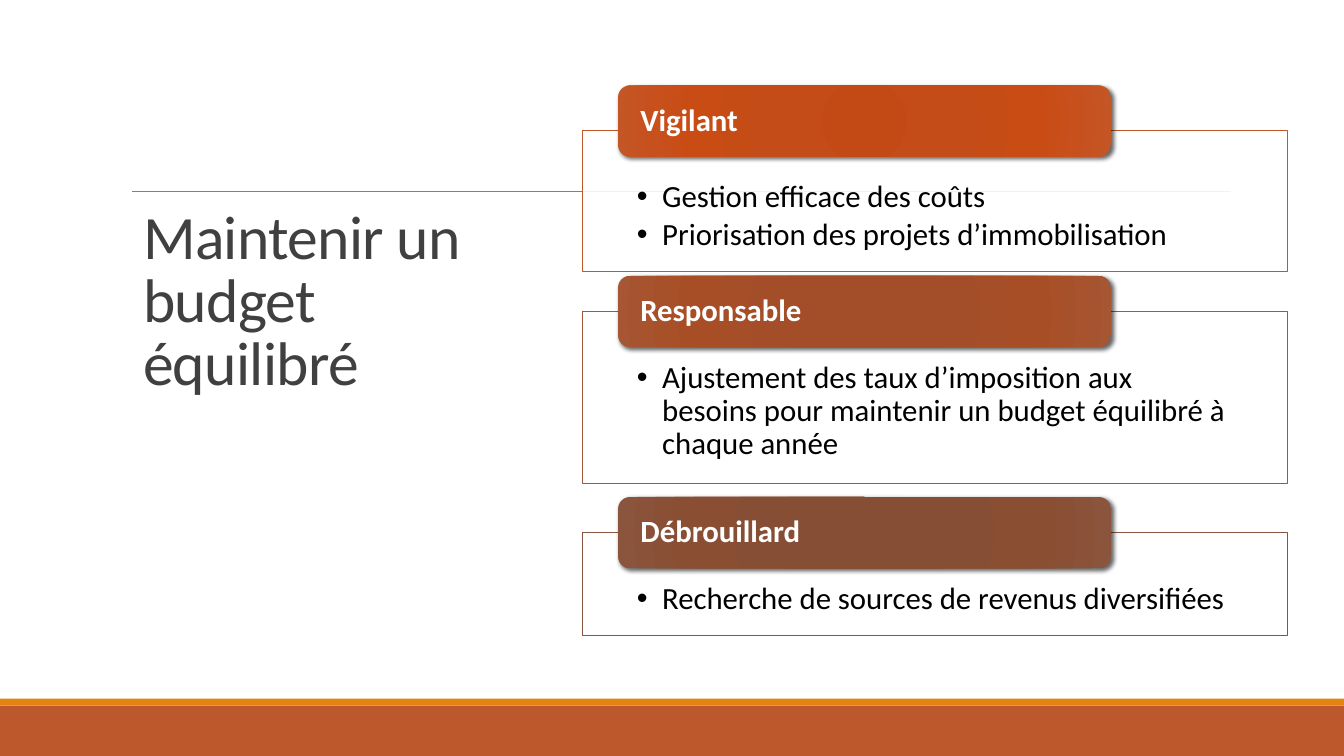
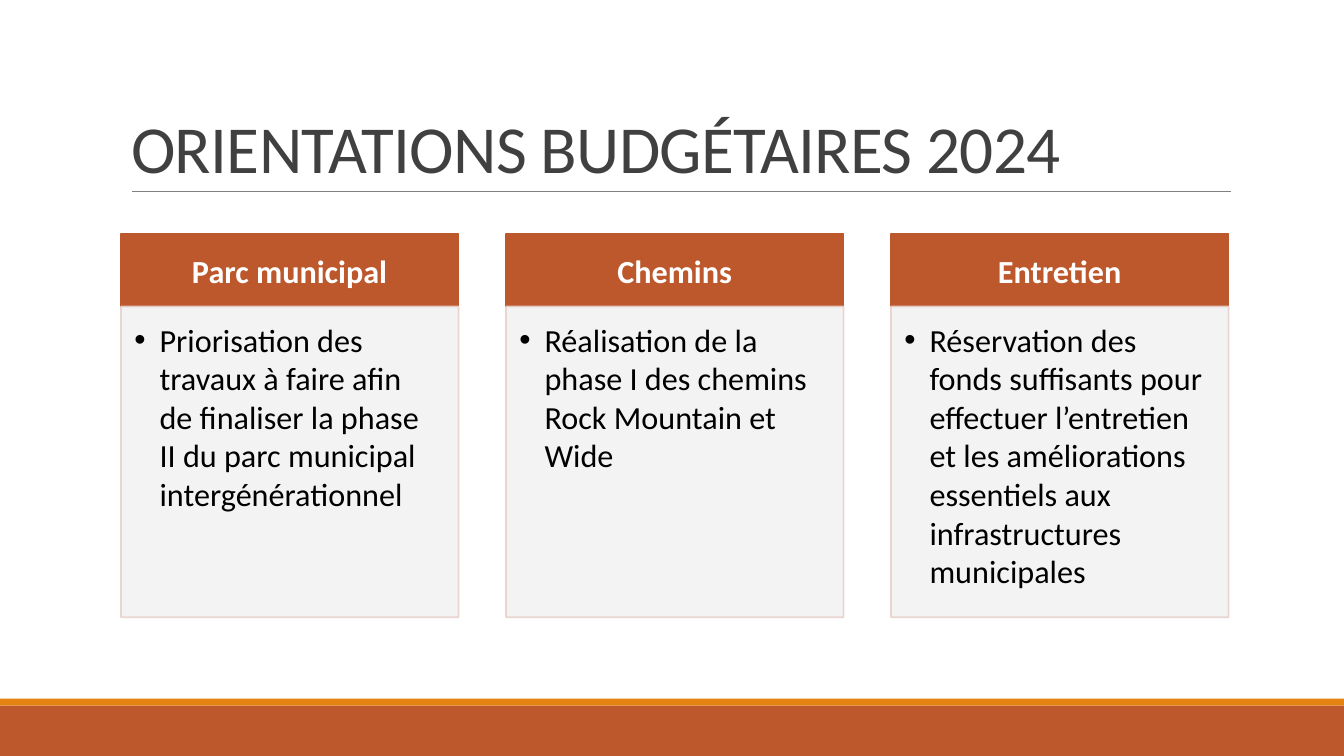
from lxml.etree import SubElement
from pptx import Presentation
from pptx.dml.color import RGBColor
from pptx.enum.shapes import MSO_CONNECTOR, MSO_SHAPE
from pptx.enum.text import MSO_ANCHOR as Anchor, MSO_AUTO_SIZE, PP_ALIGN as Align
from pptx.oxml.ns import qn
from pptx.util import Pt

COLORS = {
    "band": "BD582C", "stripe": "E48312", "rule": "808080", "title": "404040",
    "text": "000000", "white": "FFFFFF", "panel": "F2F2F2", "panel_edge": "E8D1CD",
}
FONT = "Calibri"
SLIDE_W, SLIDE_H = 960, 540

# heading, bullets, heading top, box top, box height, outline, gradient stops
VALUES = [
    ("Vigilant",
     ["Gestion efficace des coûts", "Priorisation des projets d’immobilisation"],
     61, 93, 101, "BD582C", ("C44A15", "C34C18", "C94C15", "C45525")),
    ("Responsable",
     ["Ajustement des taux d’imposition aux besoins pour maintenir un budget "
      "équilibré à chaque année"],
     197, 222.5, 123, "A05837", ("A44C25", "A34E28", "A84E26", "A65632")),
    ("Débrouillard",
     ["Recherche de sources de revenus diversifiées"],
     355, 380.5, 73.5, "865640", ("874C32", "864E34", "8A4E33", "8A553C")),
]
PRIORITIES = [
    ("Parc municipal", "Priorisation des travaux à faire afin de finaliser la phase II "
                       "du parc municipal intergénérationnel"),
    ("Chemins", "Réalisation de la phase I des chemins Rock Mountain et Wide"),
    ("Entretien", "Réservation des fonds suffisants pour effectuer l’entretien et les "
                  "améliorations essentiels aux infrastructures municipales"),
]


def rgb(color):
    return RGBColor.from_string(COLORS.get(color, color))


def set_alpha(fill_element, percent):
    color = fill_element.find(qn("a:srgbClr"))
    SubElement(color, qn("a:alpha"), val=str(percent * 1000))


def add_block(slide, box, fill, line=None, line_width=1, preset=MSO_SHAPE.RECTANGLE):
    block = slide.shapes.add_shape(preset, *map(Pt, box))
    block.shadow.inherit = False
    block.fill.solid()
    block.fill.fore_color.rgb = rgb(fill)
    if line:
        block.line.color.rgb = rgb(line)
        block.line.width = Pt(line_width)
    else:
        block.line.fill.background()
    return block


def style_text(shape, size, color, bold=False, align=Align.LEFT, spacing=1.0):
    for paragraph in shape.text_frame.paragraphs:
        paragraph.alignment = align
        paragraph.line_spacing = spacing
        for run in paragraph.runs:
            font = run.font
            font.name, font.size, font.bold = FONT, Pt(size), bold
            font.color.rgb = rgb(color)


def set_frame(shape, insets, anchor):
    """Insets run left, top, right, bottom."""
    frame = shape.text_frame
    frame.word_wrap = True
    frame.vertical_anchor = anchor
    (frame.margin_left, frame.margin_top,
     frame.margin_right, frame.margin_bottom) = map(Pt, insets)


def write_heading(shape, text, size, inset, align, spacing):
    shape.text_frame.text = text
    set_frame(shape, (inset, 0, inset, 0), Anchor.MIDDLE)
    style_text(shape, size, "white", bold=True, align=align, spacing=spacing)


def write_bullets(shape, items, size, insets, spacing):
    shape.text_frame.text = "\n".join(items)
    set_frame(shape, insets, Anchor.TOP)
    style_text(shape, size, "text", spacing=spacing)
    for paragraph in shape.text_frame.paragraphs:
        paragraph.space_after = Pt(3.5)
        properties = paragraph.runs[0].font and paragraph._p.get_or_add_pPr()
        properties.set("marL", str(Pt(18)))
        properties.set("indent", str(-Pt(18)))
        SubElement(properties, qn("a:buFont"), typeface="Arial")
        SubElement(properties, qn("a:buChar"), char="•")


def apply_radial_gradient(shape, colors):
    solid = shape._element.spPr.find(qn("a:solidFill"))
    gradient = solid.makeelement(qn("a:gradFill"), {"rotWithShape": "1"})
    stops = SubElement(gradient, qn("a:gsLst"))
    for position, color in zip((0, 34, 70, 100), colors):
        stop = SubElement(stops, qn("a:gs"), pos=str(position * 1000))
        SubElement(stop, qn("a:srgbClr"), val=color)
    circle = SubElement(gradient, qn("a:path"), {"path": "circle"})
    SubElement(circle, qn("a:fillToRect"), dict.fromkeys("ltrb", "100000"))
    solid.getparent().replace(solid, gradient)


def add_drop_shadow(shape):
    effects = shape._element.spPr.find(qn("a:effectLst"))
    shadow = SubElement(effects, qn("a:outerShdw"), blurRad=str(Pt(3)),
                        dist=str(Pt(2)), dir="2700000", rotWithShape="0")
    SubElement(shadow, qn("a:srgbClr"), val=COLORS["text"])
    set_alpha(shadow, 60)


def add_titled_slide(deck, text, box, size):
    """Add a slide with the shared bands, rule and title style."""
    slide = deck.slides.add_slide(deck.slide_layouts[5])
    add_block(slide, (0, 504, SLIDE_W, 36), "band")
    add_block(slide, (0, 499, SLIDE_W, 5), "stripe")
    rule = slide.shapes.add_connector(
        MSO_CONNECTOR.STRAIGHT, Pt(94.5), Pt(136.75), Pt(879), Pt(136.75))
    rule.line.color.rgb = rgb("rule")
    rule.line.width = Pt(0.5)
    SubElement(rule._element.spPr, qn("a:effectLst"))

    title = slide.shapes.title
    title.left, title.top, title.width, title.height = map(Pt, box)
    title.text_frame.text = text
    title.text_frame.auto_size = MSO_AUTO_SIZE.NONE
    set_frame(title, (7.2, 3.6, 7.2, 3.6), Anchor.BOTTOM)
    style_text(title, size, "title", spacing=0.85)
    for run in title.text_frame.paragraphs[0].runs:
        run._r.get_or_add_rPr().set("spc", "-50")
    return slide


def add_value(slide, heading, bullets, tag_top, box_top, box_height, outline, gradient):
    box = add_block(slide, (416, box_top, 503.5, box_height), "white", outline)
    set_alpha(box._element.spPr.find(qn("a:solidFill")), 90)
    write_bullets(box, bullets, 22, (39, 36, 39, 12), 0.9)

    tag = add_block(slide, (441.5, tag_top, 352, 51), outline,
                    preset=MSO_SHAPE.ROUNDED_RECTANGLE)
    apply_radial_gradient(tag, gradient)
    add_drop_shadow(tag)
    write_heading(tag, heading, 22, 13.5, Align.LEFT, 0.9)


def add_priority(slide, left, heading, detail):
    width, top, header_height = 241, 167, 52
    header = add_block(slide, (left, top, width, header_height), "band", "band", 1.25)
    write_heading(header, heading, 23, 13, Align.CENTER, 1.0)

    panel = add_block(slide, (left, top + header_height, width, 222),
                      "panel", "panel_edge", 1.25)
    properties = panel._element.spPr
    set_alpha(properties.find(qn("a:solidFill")), 90)
    set_alpha(properties.find(qn("a:ln")).find(qn("a:solidFill")), 90)
    write_bullets(panel, [detail], 23, (9.5, 9.5, 13, 14), 1.0)


def main():
    deck = Presentation()
    deck.slide_width, deck.slide_height = Pt(SLIDE_W), Pt(SLIDE_H)

    balance = add_titled_slide(deck, "Maintenir un budget équilibré",
                               (95, 56, 256.5, 232), 44)
    for value in VALUES:
        add_value(balance, *value)

    orientations = add_titled_slide(deck, "ORIENTATIONS BUDGÉTAIRES 2024",
                                    (86.5, 22.5, 792, 114.5), 48)
    for column, (heading, detail) in enumerate(PRIORITIES):
        add_priority(orientations, 86.5 + 275 * column, heading, detail)

    deck.save("out.pptx")


if __name__ == "__main__":
    main()
